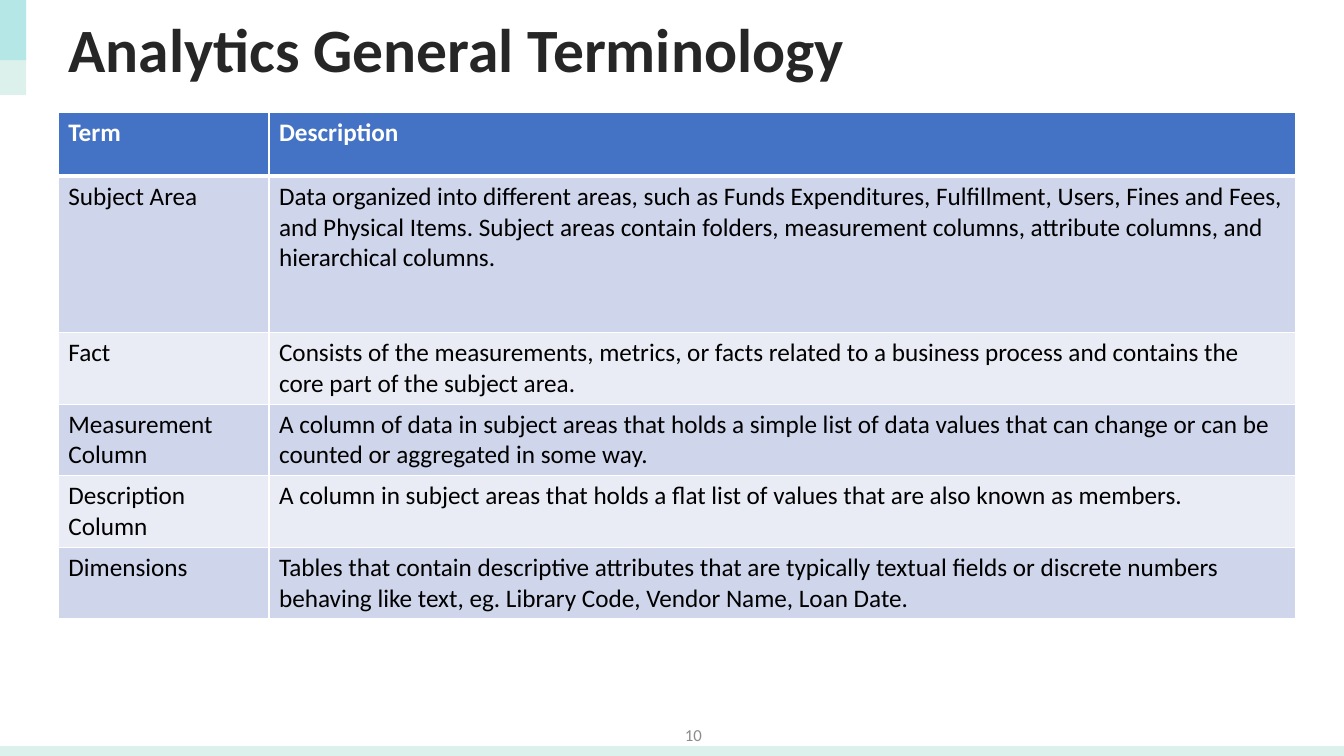
import pptx
import pptx.dml.color
import pptx.enum.shapes
import pptx.enum.text
import pptx.oxml
import pptx.oxml.ns
import pptx.util
from pptx.util import Cm

COLORS = {
    "mint": "DCF1EC",
    "aqua": "50CFDA",
    "heading": "262626",
    "header": "4472C4",
    "band_dark": "CFD5EA",
    "band_light": "E9EBF5",
    "white": "FFFFFF",
    "black": "000000",
    "grey": "8C8C8C",
}
TERMS = [
    ("Term", "Description"),
    ("Subject Area", "Data organized into different areas, such as Funds Expenditures, "
     "Fulfillment, Users, Fines and Fees, and Physical Items. Subject areas contain folders, "
     "measurement columns, attribute columns, and hierarchical columns."),
    ("Fact", "Consists of the measurements, metrics, or facts related to a business process "
     "and contains the core part of the subject area."),
    ("Measurement Column", "A column of data in subject areas that holds a simple list of data "
     "values that can change or can be counted or aggregated in some way."),
    ("Description Column", "A column in subject areas that holds a flat list of values that "
     "are also known as members."),
    ("Dimensions", "Tables that contain descriptive attributes that are typically textual "
     "fields or discrete numbers behaving like text, eg. Library Code, Vendor Name, Loan Date."),
]
LEFT, WIDTH = Cm(1.47), Cm(31.19)


def add_text(paragraph, text, size, color, bold=False):
    run = paragraph.add_run()
    run.text = text
    run.font.name = "Calibri"
    run.font.size = pptx.util.Pt(size)
    run.font.bold = bold
    run.font.color.rgb = pptx.dml.color.RGBColor.from_string(COLORS[color])


def set_borders(cell, bottom):
    """Draw white borders, 1 pt except for the bottom one."""
    properties = cell._tc.get_or_add_tcPr()
    for position, (side, points) in enumerate([("L", 1), ("R", 1), ("T", 1), ("B", bottom)]):
        properties.insert(position, pptx.oxml.parse_xml(
            f'<a:ln{side} {pptx.oxml.ns.nsdecls("a")} w="{pptx.util.Pt(points)}"><a:solidFill>'
            f'<a:srgbClr val="{COLORS["white"]}"/></a:solidFill></a:ln{side}>'))


presentation = pptx.Presentation()
presentation.slide_width, presentation.slide_height = Cm(33.87), Cm(19.05)
slide = presentation.slides.add_slide(presentation.slide_layouts[5])

# Bars along the edges: top, width, height, colour, opacity in percent
for top, width, height, color, opacity in [
    (18.8, 33.87, 0.36, "mint", 100),
    (0, 0.66, 2.39, "mint", 100),
    (0, 0.66, 1.52, "aqua", 27),
]:
    bar = slide.shapes.add_shape(pptx.enum.shapes.MSO_SHAPE.RECTANGLE,
                                 0, Cm(top), Cm(width), Cm(height))
    bar.shadow.inherit = False
    bar.line.fill.background()
    bar.fill.solid()
    bar.fill.fore_color.rgb = pptx.dml.color.RGBColor.from_string(COLORS[color])
    if opacity < 100:
        rgb = bar.fill._xPr.find(".//" + pptx.oxml.ns.qn("a:srgbClr"))
        rgb.append(pptx.oxml.parse_xml(
            f'<a:alpha {pptx.oxml.ns.nsdecls("a")} val="{opacity * 1000}"/>'))

# Heading
heading = slide.shapes.title
heading.left, heading.top, heading.width, heading.height = LEFT, Cm(0.25), WIDTH, Cm(2.13)
heading.text_frame.auto_size = pptx.enum.text.MSO_AUTO_SIZE.NONE
heading.text_frame.vertical_anchor = pptx.enum.text.MSO_ANCHOR.MIDDLE
heading_line = heading.text_frame.paragraphs[0]
heading_line.alignment = pptx.enum.text.PP_ALIGN.LEFT
heading_line.line_spacing = 0.9
add_text(heading_line, "Analytics General Terminology", 44, "heading", bold=True)

# Glossary
row_heights = [Cm(1.6), Cm(3.94)] + [Cm(1.6)] * 4
glossary = slide.shapes.add_table(len(TERMS), 2, LEFT, Cm(2.84), WIDTH, sum(row_heights)).table
glossary.columns[0].width = Cm(5.31)
glossary.columns[1].width = Cm(25.88)
for index, entry in enumerate(TERMS):
    glossary.rows[index].height = row_heights[index]
    is_header = index == 0
    band = "header" if is_header else "band_dark" if index % 2 else "band_light"
    for column, text in enumerate(entry):
        cell = glossary.cell(index, column)
        cell.fill.solid()
        cell.fill.fore_color.rgb = pptx.dml.color.RGBColor.from_string(COLORS[band])
        set_borders(cell, bottom=3 if is_header else 1)
        add_text(cell.text_frame.paragraphs[0], text, 18,
                 "white" if is_header else "black", bold=is_header)

# Page number
page_number = slide.shapes.add_textbox(Cm(15.93), Cm(17.83), Cm(2.01), Cm(1.35)).text_frame
page_number.word_wrap = True
page_number.vertical_anchor = pptx.enum.text.MSO_ANCHOR.MIDDLE
page_number.paragraphs[0].alignment = pptx.enum.text.PP_ALIGN.RIGHT
add_text(page_number.paragraphs[0], "10", 12, "grey")

presentation.save("out.pptx")
